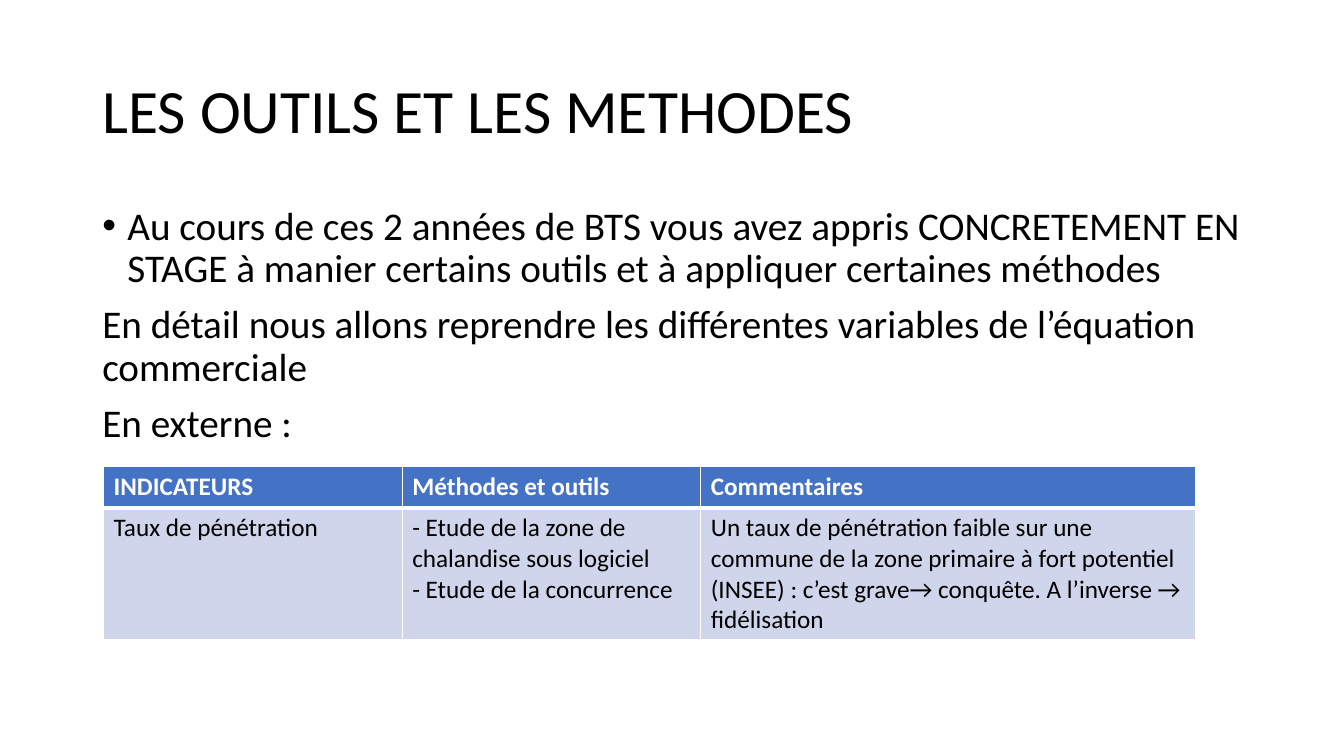
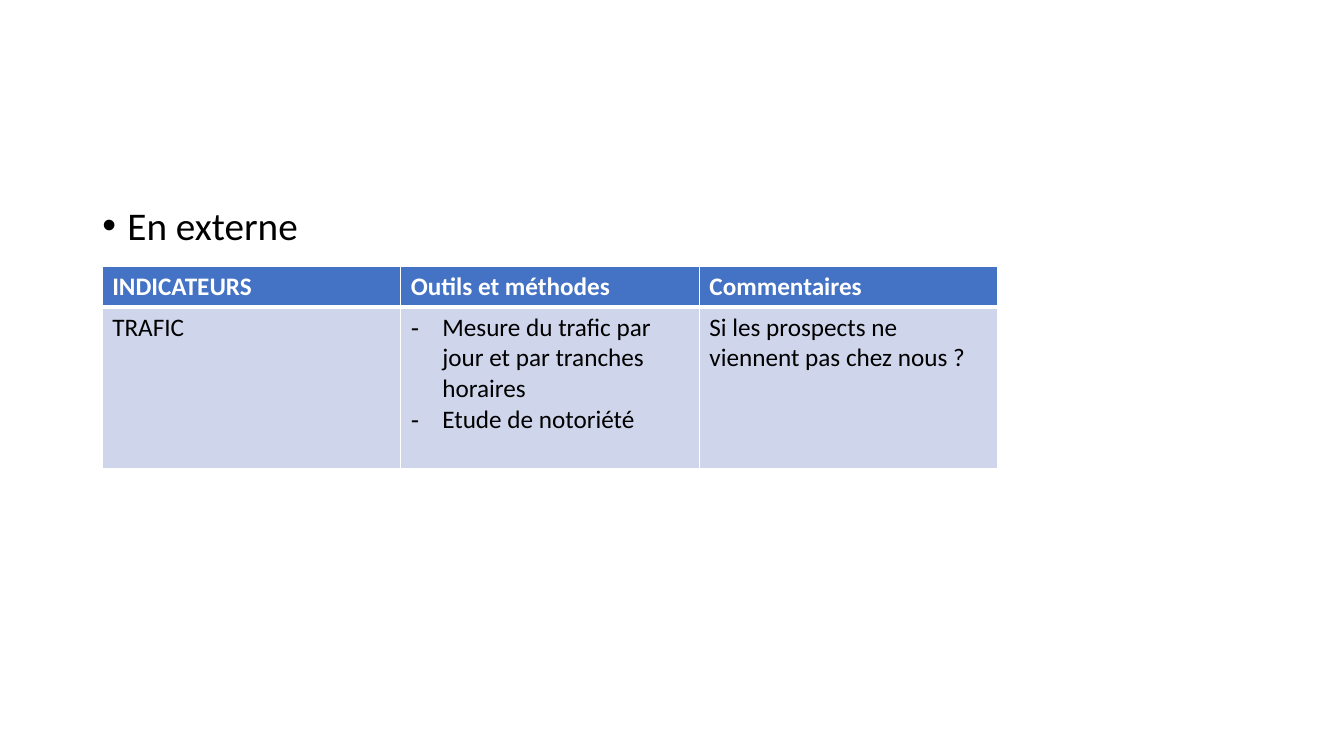
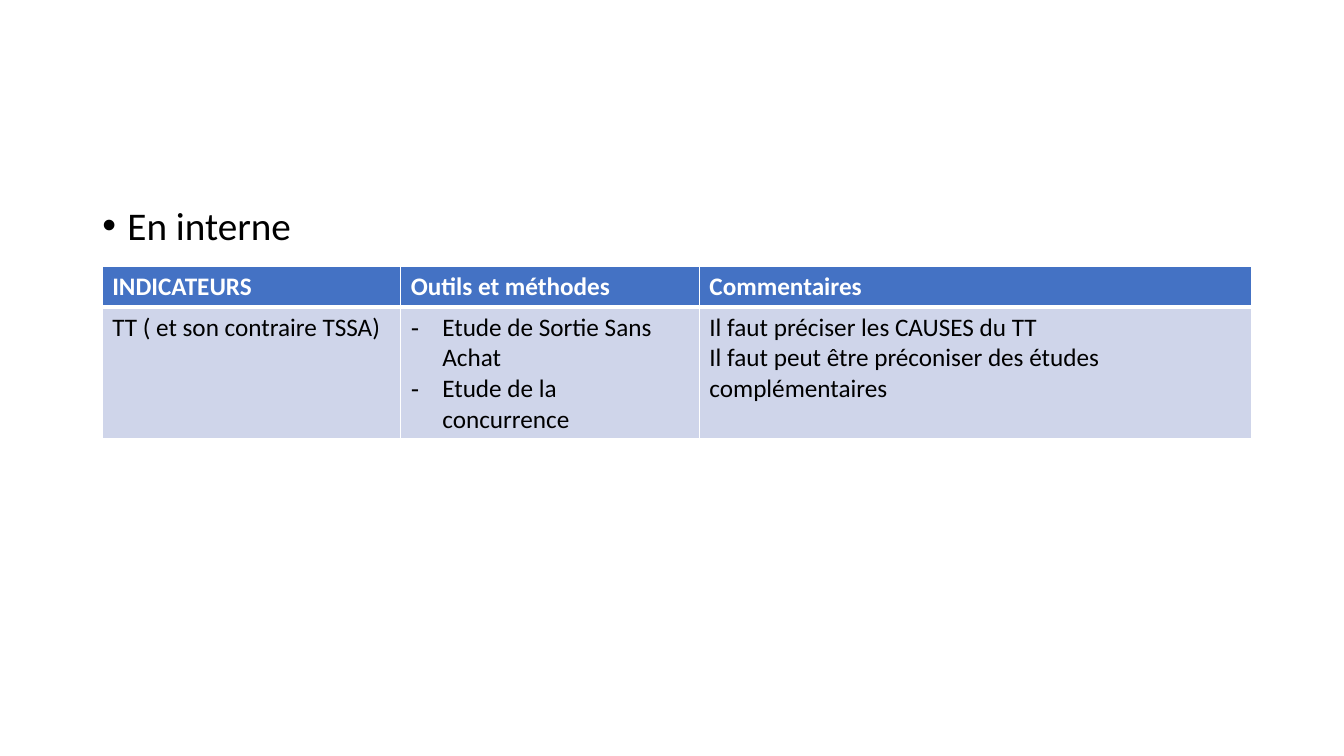
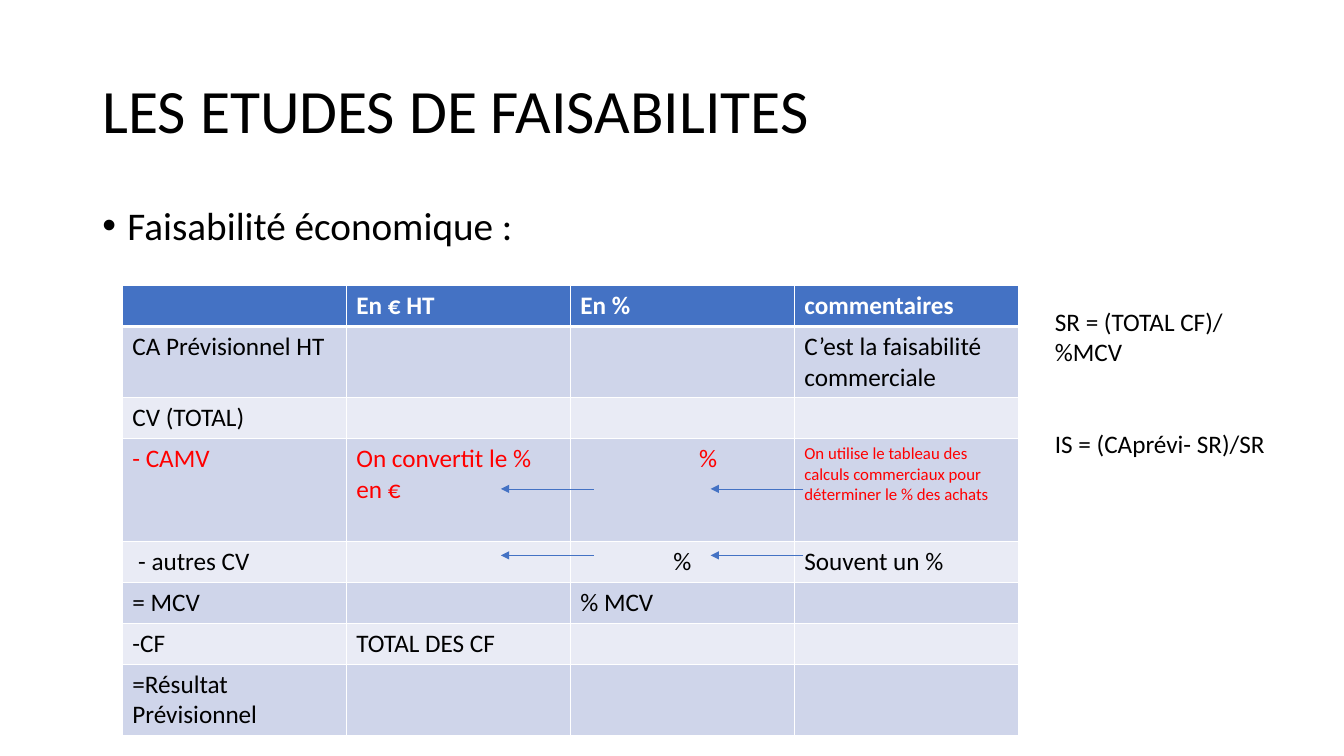
from dataclasses import dataclass

from lxml import etree
from pptx import Presentation
from pptx.dml.color import RGBColor
from pptx.enum import shapes, text
from pptx.oxml import ns
from pptx.util import Pt


@dataclass(frozen=True)
class Theme:
    font: str = "Calibri"
    ink: str = "000000"
    white: str = "FFFFFF"
    accent: str = "4472C4"
    band: str = "CFD5EA"
    pale_band: str = "E9EBF5"
    alert: str = "FF0000"
    title: float = 44
    body: float = 28
    cell: float = 18
    note: float = 12


theme = Theme()


def write(frame, words, size=theme.cell, color=theme.ink, bold=False,
          align=text.PP_ALIGN.LEFT, line=1.0, before=0, gap=0):
    for index, entry in enumerate(words.split("\n")):
        para = frame.add_paragraph() if index else frame.paragraphs[0]
        para.alignment = align
        para.line_spacing = line
        para.space_before = Pt(before + (gap if index else 0))
        bullet, _, content = entry.rpartition("\t")
        if bullet:
            hang = Pt(18 if bullet == "•" else 22.5)
            properties = para._p.get_or_add_pPr()
            properties.set("marL", str(hang))
            properties.set("indent", str(-hang))
            etree.SubElement(properties, ns.qn("a:buFont"), typeface="Arial")
            etree.SubElement(properties, ns.qn("a:buChar"), char=bullet)
        if content:
            span = para.add_run()
            span.text = content
            span.font.name = theme.font
            span.font.size = Pt(size)
            span.font.bold = bold
            span.font.color.rgb = RGBColor.from_string(color)


def add_border(cell, side, width):
    properties = cell._tc.get_or_add_tcPr()
    edge = etree.SubElement(properties, ns.qn(f"a:ln{side}"), w=str(Pt(width)))
    fill = etree.SubElement(edge, ns.qn("a:solidFill"))
    etree.SubElement(fill, ns.qn("a:srgbClr"), val=theme.white)


low, medium, high = 29.2, 51, 73.4
column = 213.3
red = {"color": theme.alert}
centred = {"align": text.PP_ALIGN.CENTER}

pages = [
    {
        "title": "LES OUTILS ET LES METHODES",
        "body": "•\tAu cours de ces 2 années de BTS vous avez appris CONCRETEMENT EN STAGE "
                "à manier certains outils et à appliquer certaines méthodes\n"
                "En détail nous allons reprendre les différentes variables de l’équation commerciale\n"
                "En externe :",
        "corner": (74, 333.4),
        "columns": [column, column, 353.4],
        "heights": [low, 94],
        "rows": [
            ["INDICATEURS", "Méthodes et outils", "Commentaires"],
            ["Taux de pénétration",
             "- Etude de la zone de chalandise sous logiciel\n- Etude de la concurrence",
             "Un taux de pénétration faible sur une commune de la zone primaire à fort potentiel "
             "(INSEE) : c’est grave→ conquête. A l’inverse → fidélisation"],
        ],
    },
    {
        "body": "•\tEn externe",
        "corner": (73, 190.2),
        "columns": [column] * 3,
        "heights": [low, 115.6],
        "rows": [
            ["INDICATEURS", "Outils et méthodes", "Commentaires"],
            ["TRAFIC",
             "-\tMesure du trafic par jour et par tranches horaires\n-\tEtude de notoriété",
             "Si les prospects ne viennent pas chez nous ?"],
        ],
    },
    {
        "body": "•\tEn interne",
        "corner": (73, 190.2),
        "columns": [column, column, 394.4],
        "heights": [low, 94],
        "rows": [
            ["INDICATEURS", "Outils et méthodes", "Commentaires"],
            ["TT ( et son contraire TSSA)",
             "-\tEtude de Sortie Sans Achat\n-\tEtude de la concurrence",
             "Il faut préciser les CAUSES du TT\n"
             "Il faut peut être préconiser des études complémentaires"],
        ],
    },
    {
        "title": "LES ETUDES DE FAISABILITES",
        "body": "•\tFaisabilité économique :",
        "corner": (87.4, 204),
        "columns": [160] * 4,
        "heights": [low, medium, low, high, low, low, low, medium],
        "rows": [
            ["", "En € HT", "En %", "commentaires"],
            ["CA Prévisionnel HT", "", "", "C’est la faisabilité commerciale"],
            ["CV (TOTAL)", "", "", ""],
            ["- CAMV", "On convertit le % en €", "%",
             "On utilise le tableau des calculs commerciaux pour déterminer le % des achats"],
            [" - autres CV", "", "%", "Souvent un %"],
            ["= MCV", "", "% MCV", ""],
            ["-CF", "TOTAL DES CF", "", ""],
            ["=Résultat Prévisionnel", "", "", ""],
        ],
        "formats": {
            (3, 0): red,
            (3, 1): red,
            (3, 2): red | centred,
            (3, 3): red | {"size": theme.note},
            (4, 2): centred,
        },
    },
]

deck = Presentation()
deck.slide_width, deck.slide_height = Pt(960), Pt(540)
title_only, blank = deck.slide_layouts[5], deck.slide_layouts[6]

for content in pages:
    page = deck.slides.add_slide(title_only if "title" in content else blank)
    if "title" in content:
        title = page.shapes.title
        title.left, title.top, title.width, title.height = Pt(66), Pt(28.8), Pt(828), Pt(104.4)
        title.text_frame.auto_size = text.MSO_AUTO_SIZE.NONE
        title.text_frame.vertical_anchor = text.MSO_ANCHOR.MIDDLE
        write(title.text_frame, content["title"], size=theme.title, line=0.9)

    body = page.shapes.add_textbox(Pt(66), Pt(143.8), Pt(828), Pt(342.6))
    body.text_frame.word_wrap = True
    write(body.text_frame, content["body"], size=theme.body, line=0.9, before=10)

    columns, heights, rows = content["columns"], content["heights"], content["rows"]
    left, top = content["corner"]
    table = page.shapes.add_table(len(rows), len(columns), Pt(left), Pt(top),
                                  Pt(sum(columns)), Pt(sum(heights))).table
    for index, width in enumerate(columns):
        table.columns[index].width = Pt(width)
    for row, entries in enumerate(rows):
        table.rows[row].height = Pt(heights[row])
        header = row == 0
        fill = theme.accent if header else theme.band if row % 2 else theme.pale_band
        for col, words in enumerate(entries):
            cell = table.cell(row, col)
            for side in "LRTB":
                thick = header and side == "B" or row == 1 and side == "T"
                add_border(cell, side, 3 if thick else 1)
            cell.fill.solid()
            cell.fill.fore_color.rgb = RGBColor.from_string(fill)
            look = {"color": theme.white if header else theme.ink, "bold": header}
            write(cell.text_frame, words, **look | content.get("formats", {}).get((row, col), {}))

table.cell(3, 2).margin_left = Pt(44)

for y in (349.2, 396.7):
    for start in (424, 573.8):
        arrow = page.shapes.add_connector(shapes.MSO_CONNECTOR.STRAIGHT,
                                          Pt(start), Pt(y), Pt(start - 66.2), Pt(y))
        arrow.line.width = Pt(0.5)
        arrow.line.color.rgb = RGBColor.from_string(theme.accent)
        etree.SubElement(arrow.line._get_or_add_ln(), ns.qn("a:tailEnd"), type="triangle")
        etree.SubElement(arrow._element.spPr, ns.qn("a:effectLst"))

formulas = page.shapes.add_textbox(Pt(746.4), Pt(215.4), Pt(169.2), Pt(116.6))
formulas.text_frame.word_wrap = True
write(formulas.text_frame, "SR = (TOTAL CF)/ %MCV\nIS = (CAprévi- SR)/SR", gap=43.6)

deck.save("out.pptx")
